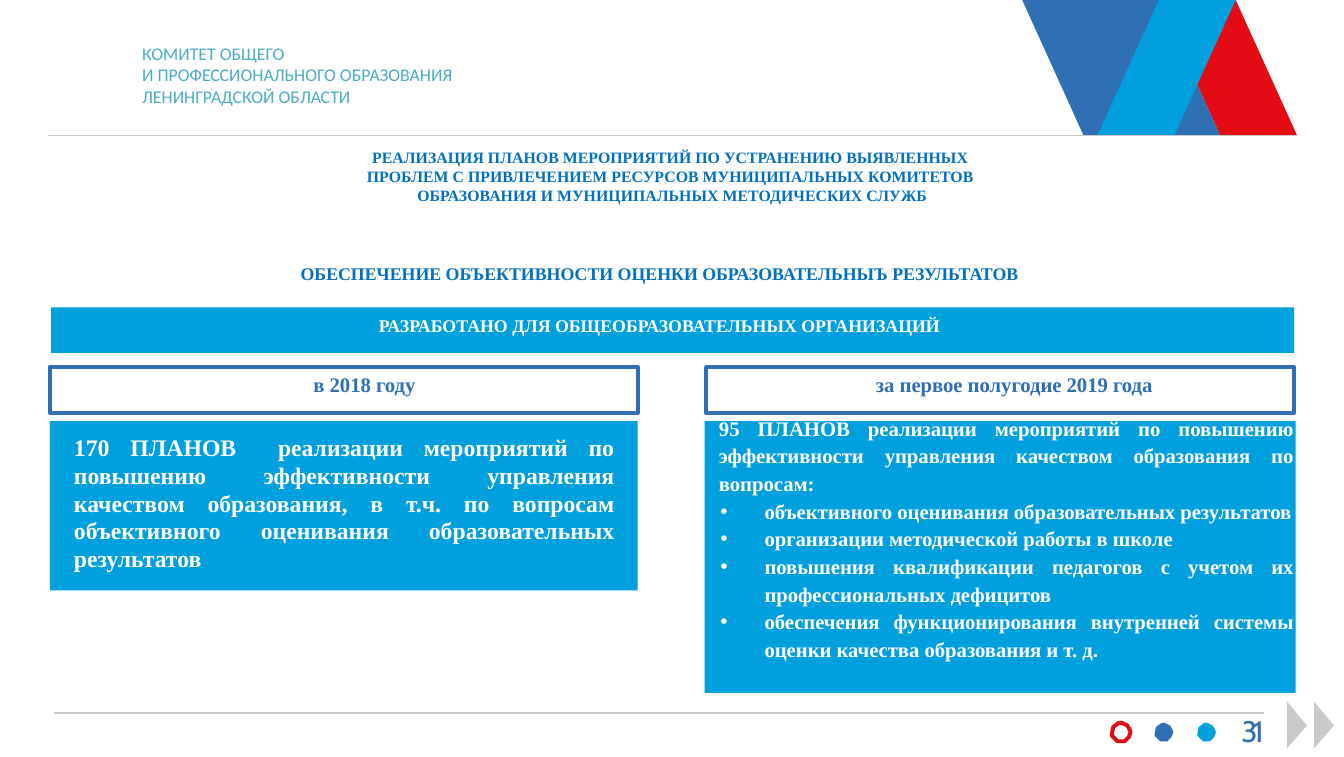
from lxml.etree import SubElement
from pptx import Presentation
from pptx.dml.color import RGBColor
from pptx.enum.shapes import MSO_CONNECTOR as Link, MSO_SHAPE as Preset
from pptx.enum.text import MSO_ANCHOR as Anchor, MSO_AUTO_SIZE as Fit, PP_ALIGN as Align
from pptx.oxml.ns import qn
from pptx.util import Inches, Pt

COLORS = {
    "sky": "009FDD", "blue": "2F6FB3", "red": "E40B14", "rule": "C7C9C8",
    "arrow": "C8C9CA", "teal": "4BACC6", "heading": "0070C0", "white": "FFFFFF",
}
SERIF = "Times New Roman"

TITLE = [
    "РЕАЛИЗАЦИЯ ПЛАНОВ МЕРОПРИЯТИЙ ПО УСТРАНЕНИЮ ВЫЯВЛЕННЫХ ",
    "ПРОБЛЕМ С ПРИВЛЕЧЕНИЕМ РЕСУРСОВ МУНИЦИПАЛЬНЫХ КОМИТЕТОВ ",
    "ОБРАЗОВАНИЯ И МУНИЦИПАЛЬНЫХ МЕТОДИЧЕСКИХ СЛУЖБ",
]
COMMITTEE = ["КОМИТЕТ ОБЩЕГО", "И ПРОФЕССИОНАЛЬНОГО ОБРАЗОВАНИЯ", "ЛЕНИНГРАДСКОЙ ОБЛАСТИ"]
SUBTITLE = ["ОБЕСПЕЧЕНИЕ ОБЪЕКТИВНОСТИ ОЦЕНКИ ОБРАЗОВАТЕЛЬНЫЪ РЕЗУЛЬТАТОВ"]
BANNER = ["РАЗРАБОТАНО ДЛЯ ОБЩЕОБРАЗОВАТЕЛЬНЫХ ОРГАНИЗАЦИЙ"]
YEARS = [
    (["в 2018 году"], (2.05, 2.61, 1.01, 0.25), (0.35, 2.58, 4.13, 0.32)),
    (["за первое полугодие 2019 года"], (6.04, 2.61, 2.16, 0.25), (4.96, 2.58, 4.13, 0.32)),
]
PLANS_2018 = [
    "170 ПЛАНОВ  реализации мероприятий по повышению эффективности управления качеством "
    "образования, в т.ч. по вопросам объективного оценивания образовательных результатов",
]
PLANS_2019 = [
    "95 ПЛАНОВ реализации мероприятий по повышению эффективности управления качеством "
    "образования по вопросам:",
]
TOPICS_2019 = [
    "объективного оценивания образовательных результатов",
    "организации методической работы в школе",
    "повышения квалификации педагогов с учетом их профессиональных дефицитов",
    "обеспечения функционирования внутренней системы оценки качества образования и т. д.",
]
PAGE = ["31"]

PANELS = [(0.36, 2.16, 8.73, 0.32), (0.35, 2.96, 4.13, 1.19), (4.95, 2.96, 4.15, 1.91)]
RIBBONS = [
    ("red", 8.14, 8.57, 9.11, 8.68),
    ("blue", 7.18, 7.61, 8.57, 8.14),
    ("sky", 8.14, 7.71, 8.25, 8.68),
]
RIBBON_HEIGHT = 0.95
RULES = [(0.34, 9.11, 0.95, 0.67), (0.38, 8.88, 5.01, 0.77)]
DOT_OUTLINE = [
    (0.05, 0), (0.01, 0.03), (0, 0.08), (0, 0.09), (0.04, 0.13), (0.08, 0.13),
    (0.09, 0.13), (0.12, 0.1), (0.13, 0.07), (0.13, 0.06), (0.11, 0.02), (0.07, 0),
]
DOTS = [(None, "red"), ("blue", None), ("sky", None)]
DOT_LEFT, DOT_TOP, DOT_STEP = 7.81, 5.08, 0.3
ARROW_LEFTS = [9.04, 9.23]

deck = Presentation()
deck.slide_width, deck.slide_height = Inches(9.44), Inches(5.32)
slide = deck.slides.add_slide(deck.slide_layouts[5])
shapes = slide.shapes


def rgb(name):
    return RGBColor.from_string(COLORS[name])


def paint(shape, fill=None, line=None):
    shape.shadow.inherit = False
    if fill:
        shape.fill.solid()
        shape.fill.fore_color.rgb = rgb(fill)
    else:
        shape.fill.background()
    if line:
        shape.line.color.rgb = rgb(line)
        shape.line.width = Pt(2)
    else:
        shape.line.fill.background()


def add_box(box, fill=None, line=None):
    paint(shapes.add_shape(Preset.RECTANGLE, *map(Inches, box)), fill, line)


def add_outline(points, fill=None, line=None):
    corners = [(Inches(x), Inches(y)) for x, y in points]
    builder = shapes.build_freeform(*corners[0])
    builder.add_line_segments(corners[1:], close=True)
    paint(builder.convert_to_shape(), fill, line)


def add_rule(left, right, y, width):
    rule = shapes.add_connector(Link.STRAIGHT, Inches(left), Inches(y), Inches(right), Inches(y))
    rule.line.color.rgb = rgb("rule")
    rule.line.width = Pt(width)
    SubElement(rule._element.spPr, qn("a:effectLst"))


def write(holder, lines, size, color, font=SERIF, bold=True, align=Align.CENTER,
          wrap=True, inset=True, indent=0, spacing=None, bullets=(), tracking=None):
    frame = holder.text_frame
    frame.word_wrap, frame.auto_size = wrap, Fit.NONE
    frame.vertical_anchor = Anchor.TOP
    side, edge = (0.1, 0.05) if inset else (0, 0)
    frame.margin_left = frame.margin_right = Inches(side)
    frame.margin_top = frame.margin_bottom = Inches(edge)
    for index, line in enumerate([*lines, *bullets]):
        paragraph = frame.add_paragraph() if index else frame.paragraphs[0]
        paragraph.alignment = align
        paragraph.space_before = paragraph.space_after = Pt(0)
        paragraph.line_spacing = spacing or 1.0
        properties = paragraph._p.get_or_add_pPr()
        bulleted = index >= len(lines)
        properties.set("marL", str(Inches(0.33 if bulleted else indent)))
        properties.set("indent", str(Inches(-0.31 if bulleted else 0)))
        if bulleted:
            bullet_color = SubElement(properties, qn("a:buClr"))
            SubElement(bullet_color, qn("a:srgbClr"), val=COLORS[color])
            SubElement(properties, qn("a:buFont"), typeface="Arial")
            SubElement(properties, qn("a:buChar"), char="•")
        run = paragraph.add_run()
        run.text = line
        run.font.name, run.font.size, run.font.bold = font, Pt(size), bold
        run.font.color.rgb = rgb(color)
        if tracking:
            run._r.get_or_add_rPr().set("spc", str(tracking))


def add_text(box, lines, size, color, **style):
    write(shapes.add_textbox(*map(Inches, box)), lines, size, color, **style)


for panel in PANELS:
    add_box(panel, fill="sky")
for color, top_left, bottom_left, bottom_right, top_right in RIBBONS:
    add_outline([(top_left, 0), (bottom_left, RIBBON_HEIGHT),
                 (bottom_right, RIBBON_HEIGHT), (top_right, 0)], fill=color)
for rule in RULES:
    add_rule(*rule)
for index, (fill, line) in enumerate(DOTS):
    left = DOT_LEFT + index * DOT_STEP
    add_outline([(left + x, DOT_TOP + y) for x, y in DOT_OUTLINE], fill, line)
for left in ARROW_LEFTS:
    add_outline([(left, 4.93), (left, 5.26), (left + 0.14, 5.1)], fill="arrow")

title = shapes.title
title.left, title.top, title.width, title.height = map(Inches, (1.14, 0.99, 7.17, 0.5))
write(title, TITLE, 8, "heading")
add_text((0.9, 0.25, 2.48, 0.56), COMMITTEE, 9, "teal", font="Calibri", bold=False,
         align=Align.LEFT, wrap=False)
add_text((1.94, 1.8, 5.38, 0.25), SUBTITLE, 9, "heading", wrap=False)
add_text((2.49, 2.16, 4.28, 0.25), BANNER, 9, "white", wrap=False)
for year, label_box, frame_box in YEARS:
    add_box(frame_box, line="blue")
    add_text(label_box, year, 10.5, "blue", inset=False, indent=0.01)
plan_style = dict(align=Align.JUSTIFY, inset=False, indent=0.01, spacing=Pt(14))
add_text((0.51, 3.05, 3.81, 0.79), PLANS_2018, 12, "white", **plan_style)
add_text((5.04, 2.9, 4.05, 0.75), PLANS_2019, 10.5, "white", bullets=TOPICS_2019, **plan_style)
add_text((8.69, 5.01, 0.22, 0.27), PAGE, 15, "blue", font="Cabin", bold=False,
         align=Align.LEFT, inset=False, indent=0.03, tracking=-220)

deck.save("out.pptx")
